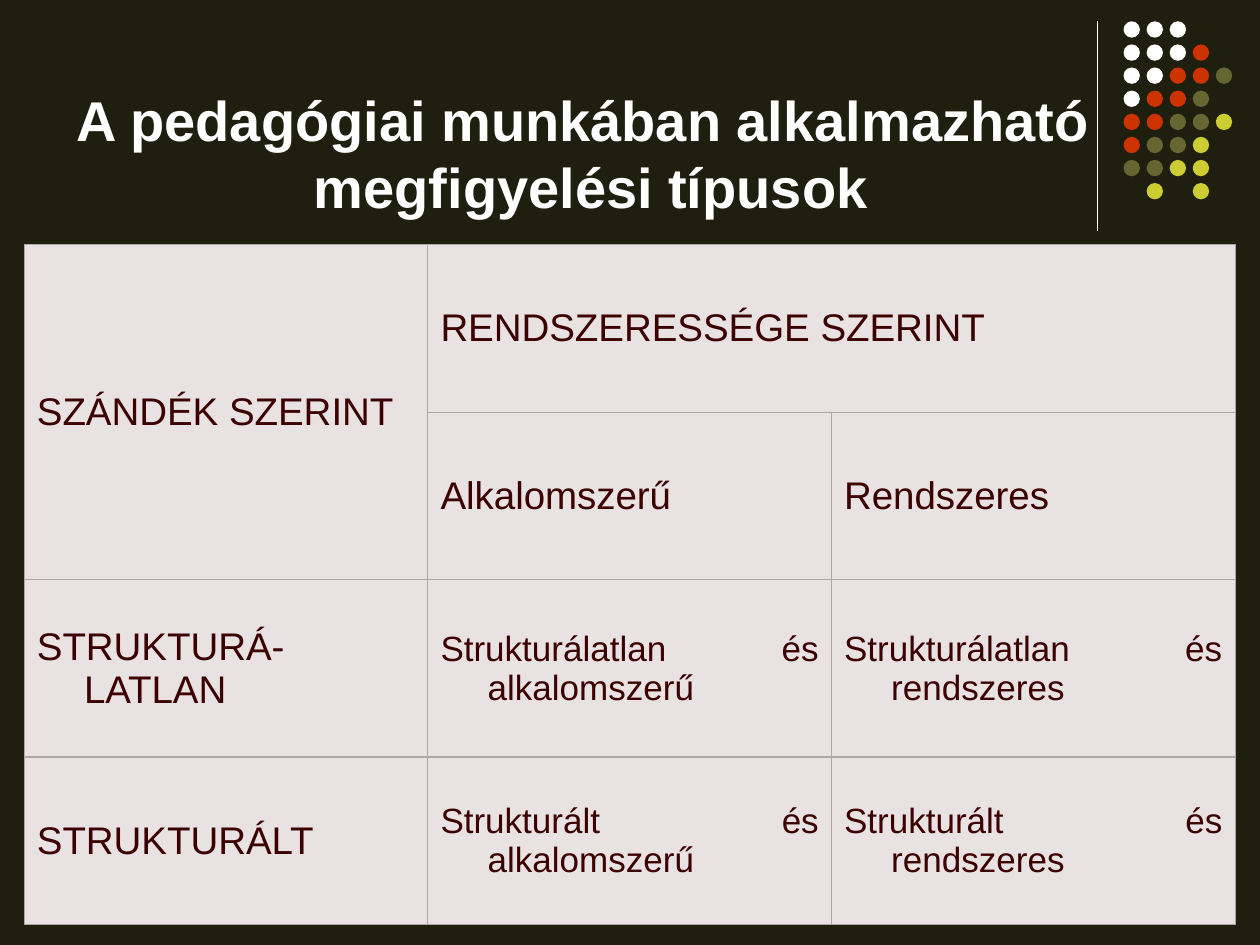
from lxml.etree import SubElement
from pptx import Presentation
from pptx.dml.color import RGBColor
from pptx.enum.shapes import MSO_CONNECTOR as Connector, MSO_SHAPE as Shape
from pptx.enum.text import MSO_ANCHOR as Anchor, MSO_AUTO_SIZE as AutoSize, PP_ALIGN as Align
from pptx.oxml.ns import qn
from pptx.util import Cm, Pt

BACKGROUND = RGBColor(0x1F, 0x1F, 0x0F)
WHITE = RGBColor(0xFF, 0xFF, 0xFF)
RED = RGBColor(0xCC, 0x33, 0x00)
OLIVE = RGBColor(0x66, 0x66, 0x33)
YELLOW = RGBColor(0xCC, 0xCC, 0x33)
CELL_FILL = RGBColor(0xE8, 0xE2, 0xE2)
CELL_TEXT = RGBColor(0x3C, 0x00, 0x00)
BORDER = RGBColor(0xAE, 0xA6, 0xA6)

DOT_COLORS = {"W": WHITE, "R": RED, "O": OLIVE, "Y": YELLOW}
DOT_ROWS = ["WWW", "WWWR", "WWRRO", "WRRO", "RROOY", "ROOY", "OOYY", " Y Y"]
DOT_SIZE = 0.33

TITLE_LINES = ["A pedagógiai munkában alkalmazható", " megfigyelési típusok"]
TITLE_FONT = {"name": "Arial", "size": Pt(32), "bold": True}
LARGE_FONT = {"name": "Arial", "size": Pt(22)}
SMALL_FONT = {"name": "Arial", "size": Pt(20)}

ROW_HEIGHTS = [3.38, 3.38, 3.57, 3.38]
CELL_TEXTS = [
    ["SZÁNDÉK SZERINT", "RENDSZERESSÉGE SZERINT", ""],
    ["", "Alkalomszerű", "Rendszeres"],
    ["STRUKTURÁ-LATLAN", "Strukturálatlan és alkalomszerű", "Strukturálatlan és rendszeres"],
    ["STRUKTURÁLT", "Strukturált és alkalomszerű", "Strukturált és rendszeres"],
]


def set_attributes(target, values):
    for name, value in values.items():
        setattr(target, name, value)


def write_paragraph(paragraph, text, font, color, alignment):
    run = paragraph.add_run()
    run.text = text
    set_attributes(run.font, font)
    run.font.color.rgb = color
    paragraph.alignment = alignment


def add_divider(slide, left, top, height):
    line = slide.shapes.add_connector(
        Connector.STRAIGHT, Cm(left), Cm(top), Cm(left), Cm(top + height))
    line.line.color.rgb = WHITE
    line.line.width = Pt(0.75)
    SubElement(line._element.spPr, qn("a:effectLst"))


def add_dots(slide, left, top, width, height):
    column_step = (width - DOT_SIZE) / (max(map(len, DOT_ROWS)) - 1)
    row_step = (height - DOT_SIZE) / (len(DOT_ROWS) - 1)
    for row, codes in enumerate(DOT_ROWS):
        for column, code in enumerate(codes):
            if code not in DOT_COLORS:
                continue
            dot = slide.shapes.add_shape(
                Shape.OVAL, Cm(left + column * column_step), Cm(top + row * row_step),
                Cm(DOT_SIZE), Cm(DOT_SIZE))
            dot.shadow.inherit = False
            dot.fill.solid()
            dot.fill.fore_color.rgb = DOT_COLORS[code]
            dot.line.fill.background()


def place_title(slide, left, top, width, height):
    title = slide.shapes.title
    set_attributes(title, {"left": Cm(left), "top": Cm(top),
                           "width": Cm(width), "height": Cm(height)})
    frame = title.text_frame
    set_attributes(frame, {"word_wrap": True, "auto_size": AutoSize.NONE,
                           "vertical_anchor": Anchor.MIDDLE})
    for index, text in enumerate(TITLE_LINES):
        paragraph = frame.add_paragraph() if index else frame.paragraphs[0]
        write_paragraph(paragraph, text, TITLE_FONT, WHITE, Align.CENTER)


def add_borders(cell):
    properties = cell._tc.get_or_add_tcPr()
    for side in ("a:lnL", "a:lnR", "a:lnT", "a:lnB"):
        line = SubElement(properties, qn(side), w=str(Pt(0.75)))
        fill = SubElement(line, qn("a:solidFill"))
        SubElement(fill, qn("a:srgbClr"), val=str(BORDER))


def format_cell(cell, text, is_detail, is_justified):
    add_borders(cell)
    cell.fill.solid()
    cell.fill.fore_color.rgb = CELL_FILL
    cell.vertical_anchor = Anchor.MIDDLE
    if not text:
        return
    paragraph = cell.text_frame.paragraphs[0]
    write_paragraph(paragraph, text, SMALL_FONT if is_detail else LARGE_FONT,
                    CELL_TEXT, Align.JUSTIFY if is_justified else Align.LEFT)
    indent = Cm(0.95)
    properties = paragraph._p.get_or_add_pPr()
    properties.set("marL", str(indent))
    properties.set("indent", str(-indent))


def add_type_table(slide, left, top, width):
    column_count = len(CELL_TEXTS[0])
    table = slide.shapes.add_table(
        len(CELL_TEXTS), column_count, Cm(left), Cm(top),
        Cm(width), Cm(sum(ROW_HEIGHTS))).table
    set_attributes(table, {"first_row": False, "horz_banding": False})
    for column in table.columns:
        column.width = Cm(width / column_count)
    for row, height in zip(table.rows, ROW_HEIGHTS):
        row.height = Cm(height)
    table.cell(0, 0).merge(table.cell(1, 0))
    table.cell(0, 1).merge(table.cell(0, 2))
    for row, texts in enumerate(CELL_TEXTS):
        for column, text in enumerate(texts):
            is_detail = row > 1 and column > 0
            format_cell(table.cell(row, column), text, is_detail,
                        is_detail or row == column == 0)


def main():
    presentation = Presentation()
    set_attributes(presentation, {"slide_width": Cm(25.4), "slide_height": Cm(19.05)})
    slide = presentation.slides.add_slide(presentation.slide_layouts[5])
    slide.background.fill.solid()
    slide.background.fill.fore_color.rgb = BACKGROUND
    add_divider(slide, 22.12, 0.43, 4.22)
    add_dots(slide, 22.65, 0.43, 2.19, 3.59)
    place_title(slide, 0, 1.52, 23.52, 3.1)
    add_type_table(slide, 0.49, 4.93, 24.41)
    presentation.save("out.pptx")


if __name__ == "__main__":
    main()
